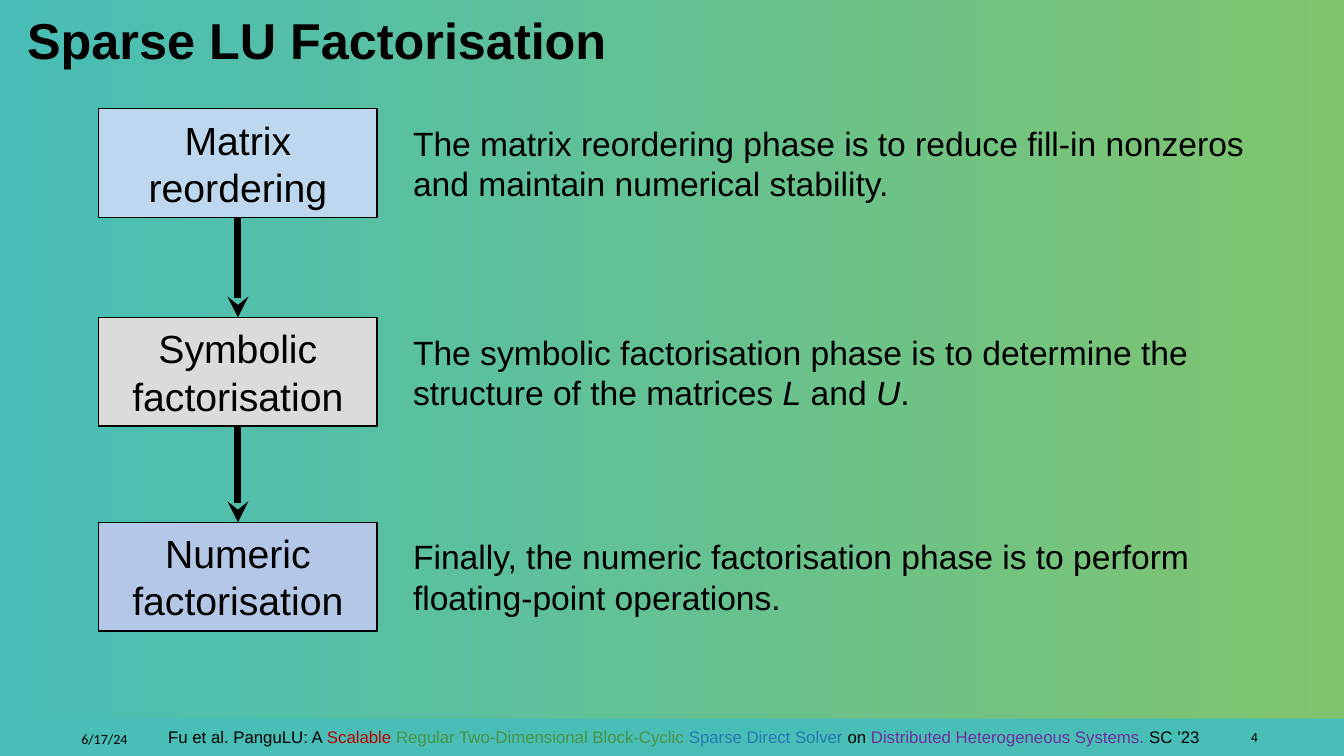
from pptx import Presentation, util as u
from pptx.dml.color import RGBColor
from pptx.enum import shapes, text
from pptx.oxml.ns import qn
from lxml import etree

Cm = u.Cm


def tint(code):
    return RGBColor.from_string(code)


def write(box, parts, size, font="Arial", align="LEFT", anchor="TOP"):
    frame = box.text_frame
    frame.word_wrap = True
    frame.vertical_anchor = getattr(text.MSO_ANCHOR, anchor)
    frame.text = parts[0][0]
    for words, *_ in parts[1:]:
        frame.paragraphs[0].add_run().text = words
    for para in frame.paragraphs:
        para.alignment = getattr(text.PP_ALIGN, align)
        for run, (_, code, slant) in zip(para.runs, parts):
            run.font.name = font
            run.font.size = u.Pt(size)
            run.font.italic = slant
            run.font.color.rgb = tint(code)


deck = Presentation()
deck.slide_width, deck.slide_height = Cm(33.87), Cm(19.05)
slide = deck.slides.add_slide(deck.slide_layouts[5])
items = slide.shapes
black = "000000"

back = slide.background.fill
back.gradient()
back.gradient_angle = 0
for stop, code, place in zip(back.gradient_stops, ("48BEB7", "80C46E"), (0, 1)):
    stop.color.rgb = tint(code)
    stop.position = place

band = items.add_shape(shapes.MSO_SHAPE.RECTANGLE, 0, Cm(18.11), Cm(33.87), Cm(0.94))
band.shadow.inherit = False
band.fill.solid()
band.fill.fore_color.rgb = tint("48BEB7")
band.line.fill.background()

cite = items.add_textbox(Cm(3.99), Cm(18.19), Cm(29.79), Cm(0.8))
write(cite, [
    ("Fu et al. PanguLU: A ", black, False),
    ("Scalable ", "C00000", False),
    ("Regular Two-Dimensional Block-Cyclic ", "499549", False),
    ("Sparse Direct Solver ", "2779B6", False),
    ("on ", black, False),
    ("Distributed Heterogeneous Systems. ", "7030A0", False),
    ("SC ’23", black, False),
], 12)

date = items.add_textbox(Cm(1.8), Cm(18.14), Cm(4.45), Cm(0.94))
write(date, [("6/17/24", black, False)], 10, "Calibri", anchor="MIDDLE")
page = items.add_textbox(Cm(30.43), Cm(18.11), Cm(1.52), Cm(0.94))
write(page, [("4", black, False)], 10, "Calibri", "RIGHT", "MIDDLE")

title = items.title
title.left, title.top, title.width, title.height = Cm(0.43), Cm(0.1), Cm(15.27), Cm(1.8)
write(title, [("Sparse LU Factorisation", black, False)], 36)
title.text_frame.auto_size = text.MSO_AUTO_SIZE.NONE
title.text_frame.word_wrap = False
title.text_frame.paragraphs[0].runs[0].font.bold = True

left, wide, high = 2.49, 7.01, 2.74
mid = left + wide / 2
phases = [
    (2.74, "BDD7EE", "Matrix\nreordering", [
        ("The matrix reordering phase is to reduce fill-in nonzeros "
         "and maintain numerical stability.", black, False)]),
    (8, "DBDBDB", "Symbolic factorisation", [
        ("The symbolic factorisation phase is to determine the "
         "structure of the matrices ", black, False),
        ("L", black, True), (" and ", black, False),
        ("U", black, True), (".", black, False)]),
    (13.16, "B4C7E7", "Numeric factorisation", [
        ("Finally, the numeric factorisation phase is to perform "
         "floating-point operations.", black, False)]),
]
end = None
for top, code, name, note in phases:
    box = items.add_shape(shapes.MSO_SHAPE.RECTANGLE, Cm(left), Cm(top), Cm(wide), Cm(high))
    box.shadow.inherit = False
    box.fill.solid()
    box.fill.fore_color.rgb = tint(code)
    box.line.color.rgb = tint(black)
    box.line.width = u.Pt(1)
    write(box, [(name, black, False)], 28, align="CENTER", anchor="MIDDLE")

    if end:
        arrow = items.add_connector(shapes.MSO_CONNECTOR.STRAIGHT, Cm(mid), Cm(end), Cm(mid), Cm(top))
        arrow.line.color.rgb = tint(black)
        arrow.line.width = u.Pt(5)
        etree.SubElement(arrow.line._get_or_add_ln(), qn("a:tailEnd"), type="stealth")
        etree.SubElement(arrow._element.spPr, qn("a:effectLst"))
    end = top + high

    label = items.add_textbox(Cm(10.16), Cm(top + 0.23), Cm(22.89), Cm(2.31))
    write(label, note, 24)

deck.save("out.pptx")
